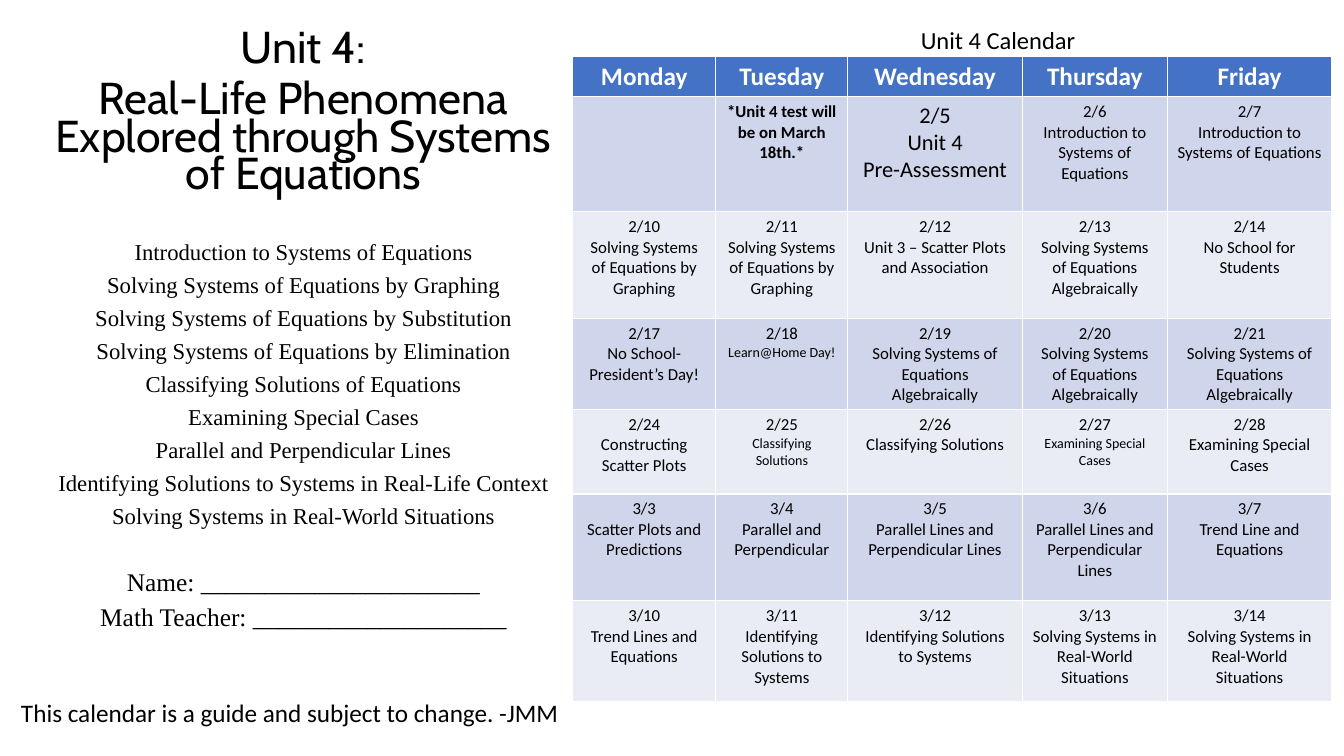
"""Build the Unit 4 cover and calendar slide."""
from dataclasses import dataclass

from pptx import Presentation
from pptx.dml.color import RGBColor
from pptx.enum.text import MSO_ANCHOR, MSO_AUTO_SIZE, PP_ALIGN
from pptx.util import Inches, Pt

CENTER = PP_ALIGN.CENTER
LEFT = PP_ALIGN.LEFT
TOP = MSO_ANCHOR.TOP
NO_AUTOFIT = MSO_AUTO_SIZE.NONE

COLORS = {
    "text": "000000",
    "header_text": "FFFFFF",
    "header": "4472C4",
    "odd_week": "CFD5EA",
    "even_week": "E9EBF5",
}
HEADING_FONT, CALENDAR_FONT, TOPIC_FONT = "Cabin", "Calibri", "Times New Roman"


@dataclass(frozen=True)
class Line:
    """One paragraph of text and its look."""
    text: str
    size: float
    font: str = CALENDAR_FONT
    bold: bool = False
    color: str = "text"
    align: PP_ALIGN = CENTER
    spacing: float = 1.0
    before: float = 0


@dataclass(frozen=True)
class Day:
    """One calendar cell: a date and what is planned."""
    date: str = ""
    plan: tuple[str, ...] = ()
    date_size: float = 12
    plan_size: float = 12
    bold: bool = False

    def lines(self) -> list[Line]:
        """Return the date and the plan as paragraphs."""
        dates = [Line(self.date, self.date_size)] if self.date else []
        return dates + [Line(text, self.plan_size, bold=self.bold) for text in self.plan]


def day(date: str, plan: str, plan_size: float = 12) -> Day:
    """Return a day with a one-paragraph plan."""
    return Day(date, (plan,), plan_size=plan_size)


GRAPHING = "Solving Systems of Equations by Graphing"
ALGEBRA = "Solving Systems of Equations Algebraically"
INTRODUCTION = "Introduction to Systems of Equations"
IDENTIFYING = "Identifying Solutions to Systems"
REAL_WORLD = "Solving Systems in Real-World Situations"
CLASSIFYING = "Classifying Solutions"
SPECIAL = "Examining Special Cases"

TOPICS = [
    INTRODUCTION,
    GRAPHING,
    "Solving Systems of Equations by Substitution",
    "Solving Systems of Equations by Elimination",
    "Classifying Solutions of Equations",
    SPECIAL,
    "Parallel and Perpendicular Lines",
    "Identifying Solutions to Systems in Real-Life Context",
    REAL_WORLD,
]
WEEKDAYS = ["Monday", "Tuesday", "Wednesday", "Thursday", "Friday"]
WEEKS = [
    [Day(), Day(plan=("*Unit 4 test will be on March 18th.*",), bold=True),
     Day("2/5", ("Unit 4", "Pre-Assessment"), 16, 16),
     day("2/6", INTRODUCTION), day("2/7", INTRODUCTION)],
    [day("2/10", GRAPHING), day("2/11", GRAPHING),
     day("2/12", "Unit 3 – Scatter Plots and Association"),
     day("2/13", ALGEBRA), day("2/14", "No School for Students")],
    [day("2/17", "No School- President’s Day!"), day("2/18", "Learn@Home Day!", 10),
     day("2/19", ALGEBRA), day("2/20", ALGEBRA), day("2/21", ALGEBRA)],
    [day("2/24", "Constructing Scatter Plots"), day("2/25", CLASSIFYING, 10),
     day("2/26", CLASSIFYING), day("2/27", SPECIAL, 10), day("2/28", SPECIAL)],
    [day("3/3", "Scatter Plots and Predictions"), day("3/4", "Parallel and Perpendicular"),
     day("3/5", "Parallel Lines and Perpendicular Lines"),
     day("3/6", "Parallel Lines and Perpendicular Lines"),
     day("3/7", "Trend Line and Equations")],
    [day("3/10", "Trend Lines and Equations"), day("3/11", IDENTIFYING),
     day("3/12", IDENTIFYING), day("3/13", REAL_WORLD), day("3/14", REAL_WORLD)],
]
COLUMN_WIDTHS = [1.42, 1.31, 1.73, 1.44, 1.63]
ROW_HEIGHTS = [0.4, 1.14, 1.06, 0.88, 0.84, 1.06, 1]


def write(text_frame, lines: list[Line]) -> None:
    """Fill a text frame with formatted paragraphs."""
    text_frame.word_wrap = True
    for index, line in enumerate(lines):
        paragraph = text_frame.add_paragraph() if index else text_frame.paragraphs[0]
        paragraph.alignment = line.align
        paragraph.line_spacing = line.spacing
        paragraph.space_before = Pt(line.before)
        run = paragraph.add_run()
        run.text = line.text
        run.font.name = line.font
        run.font.size = Pt(line.size)
        run.font.bold = line.bold
        run.font.color.rgb = RGBColor.from_string(COLORS[line.color])


def cover_lines() -> list[Line]:
    """Return the unit heading, its topics and the name lines."""
    def cover(text: str, size: float, before: float = 10, font: str = TOPIC_FONT) -> Line:
        return Line(text, size, font, spacing=0.7, before=before)

    return [
        cover("Unit 4:", 31.9, 0, HEADING_FONT),
        cover("Real-Life Phenomena Explored through Systems of Equations", 31.9,
              font=HEADING_FONT),
        *(cover(topic, 16.2, 10 if index else 34) for index, topic in enumerate(TOPICS)),
        cover("Name: " + "_" * 22, 18.1, 33),
        cover("Math Teacher: " + "_" * 20, 18.1),
    ]


def add_text(slide, left: float, top: float, width: float, height: float,
             lines: list[Line]) -> None:
    """Add a text box holding the given lines."""
    box = slide.shapes.add_textbox(Inches(left), Inches(top), Inches(width), Inches(height))
    write(box.text_frame, lines)


def set_title(slide) -> None:
    """Place and format the calendar title."""
    title = slide.shapes.title
    title.left, title.top = Inches(7.21), Inches(0.28)
    title.width, title.height = Inches(5.38), Inches(0.34)
    title.text_frame.auto_size = NO_AUTOFIT
    title.text_frame.vertical_anchor = TOP
    write(title.text_frame, [Line("Unit 4 Calendar", 17.5, spacing=0.7)])


def fill_cell(cell, color: str, lines: list[Line]) -> None:
    """Color a table cell and write its lines."""
    cell.fill.solid()
    cell.fill.fore_color.rgb = RGBColor.from_string(COLORS[color])
    write(cell.text_frame, lines)


def add_calendar(slide) -> None:
    """Add the calendar table."""
    table = slide.shapes.add_table(
        len(ROW_HEIGHTS), len(COLUMN_WIDTHS), Inches(5.68), Inches(0.56),
        Inches(sum(COLUMN_WIDTHS)), Inches(sum(ROW_HEIGHTS))).table
    for column, width in zip(table.columns, COLUMN_WIDTHS):
        column.width = Inches(width)
    for row, height in zip(table.rows, ROW_HEIGHTS):
        row.height = Inches(height)
    for column, weekday in enumerate(WEEKDAYS):
        fill_cell(table.cell(0, column), "header",
                  [Line(weekday, 18, bold=True, color="header_text")])
    for row, week in enumerate(WEEKS, start=1):
        for column, entry in enumerate(week):
            fill_cell(table.cell(row, column), "odd_week" if row % 2 else "even_week",
                      entry.lines())


def main() -> None:
    """Build and save the presentation."""
    presentation = Presentation()
    presentation.slide_width, presentation.slide_height = Inches(13.33), Inches(7.5)
    slide = presentation.slides.add_slide(presentation.slide_layouts[5])
    set_title(slide)
    add_text(slide, 0.23, 0.28, 5.56, 6.52, cover_lines())
    add_calendar(slide)
    add_text(slide, 0.11, 6.87, 5.69, 0.4,
             [Line("This calendar is a guide and subject to change. -JMM", 18, align=LEFT)])
    presentation.save("out.pptx")


if __name__ == "__main__":
    main()
